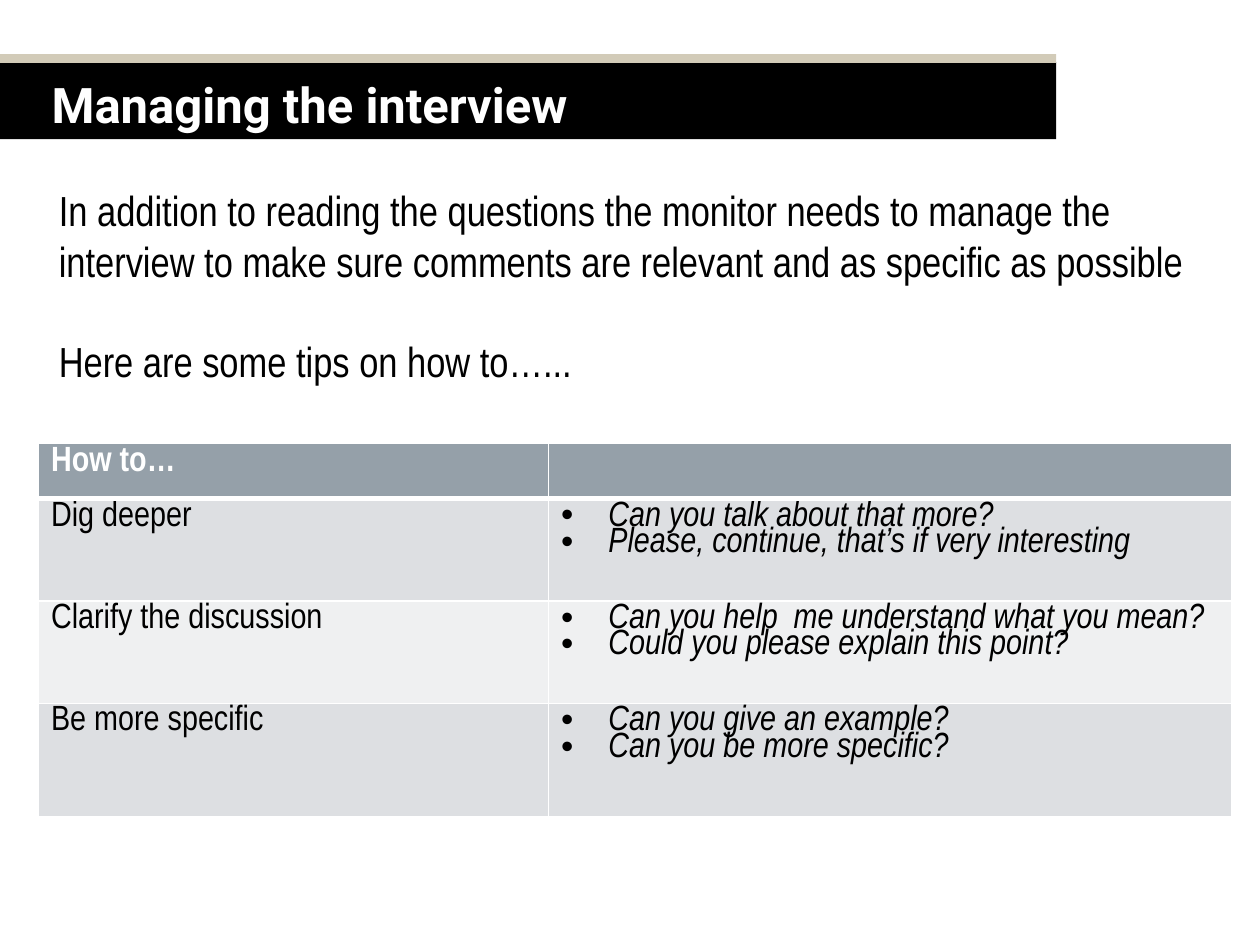
import pptx
import pptx.util
import pptx.dml.color
import pptx.enum.shapes
import pptx.enum.text
import pptx.oxml

Pt = pptx.util.Pt
ANCHOR = pptx.enum.text.MSO_ANCHOR
NS = 'xmlns:a="http://schemas.openxmlformats.org/drawingml/2006/main"'
BODY = "Arial Narrow"
ROWS = [
    ("Dig deeper", ["Can you talk about that more?",
                    "Please, continue, that’s if very interesting"]),
    ("Clarify the discussion", ["Can you help  me understand what you mean?",
                                "Could you please explain this point?"]),
    ("Be more specific", ["Can you give an example?",
                          "Can you be more specific?"]),
]


def color(code):
    return pptx.dml.color.RGBColor.from_string(code)


def paint(item, code):
    item.fill.solid()
    item.fill.fore_color.rgb = color(code)


def style(para, name, size, code, bold=False, slant=False):
    font = para.font
    font.name, font.size = name, Pt(size)
    font.bold, font.italic = bold, slant
    font.color.rgb = color(code)


def add_title(slide, left, top, width, height, text):
    strip = slide.shapes.add_shape(
        pptx.enum.shapes.MSO_SHAPE.RECTANGLE,
        Pt(left), Pt(top), Pt(width), Pt(5))
    strip.shadow.inherit = False
    paint(strip, "D2CBB8")
    strip.line.fill.background()

    title = slide.shapes.title
    title.left, title.top = Pt(left), Pt(top + 4.5)
    title.width, title.height = Pt(width), Pt(height - 4.5)
    paint(title, "000000")
    frame = title.text_frame
    frame.text = text
    frame.auto_size = pptx.enum.text.MSO_AUTO_SIZE.NONE
    frame.vertical_anchor = ANCHOR.BOTTOM
    frame.margin_left, frame.margin_bottom = Pt(29.5), Pt(3)
    para = frame.paragraphs[0]
    para.alignment = pptx.enum.text.PP_ALIGN.LEFT
    style(para, "Roboto", 28, "FFFFFF", bold=True)


def add_intro(slide, left, top, width, height, lines):
    box = slide.shapes.add_textbox(Pt(left), Pt(top), Pt(width), Pt(height))
    frame = box.text_frame
    frame.word_wrap = True
    frame.margin_top = Pt(26)
    for num, line in enumerate(lines):
        para = frame.paragraphs[0] if num == 0 else frame.add_paragraph()
        para.text = line
        if num:
            para.space_before = Pt(28.5)
        style(para, BODY, 24, "000000")


def add_lines(cell, base):
    props = cell._tc.get_or_add_tcPr()
    for side in "LRTB":
        thick = 3 if (side, base) in (("B", 0), ("T", 1)) else 1
        props.append(pptx.oxml.parse_xml(
            f'<a:ln{side} {NS} w="{Pt(thick)}"><a:solidFill>'
            f'<a:srgbClr val="FFFFFF"/></a:solidFill></a:ln{side}>'))


def add_bullet(para):
    props = para._p.get_or_add_pPr()
    props.set("marL", str(Pt(27)))
    props.set("indent", str(Pt(-27)))
    for tag in ('buFont {} typeface="Arial"', 'buChar {} char="•"'):
        props.append(pptx.oxml.parse_xml(f"<a:{tag.format(NS)}/>"))


def fill_cell(cell, row, lines, code, fill, bold=False, tips=False):
    add_lines(cell, row)
    paint(cell, fill)
    cell.vertical_anchor = ANCHOR.TOP
    frame = cell.text_frame
    for num, line in enumerate(lines):
        para = frame.paragraphs[0] if num == 0 else frame.add_paragraph()
        para.text = line
        para.line_spacing = 0.8
        if tips:
            add_bullet(para)
        style(para, BODY, 20, code, bold, tips)


def add_tips(slide, left, top, width, height):
    grid = slide.shapes.add_table(
        len(ROWS) + 1, 2, Pt(left), Pt(top), Pt(width), Pt(height)).table
    first = 291.5
    for col, size in zip(grid.columns, (first, width - first)):
        col.width = Pt(size)
    sizes = (31.5, 58.5, 58.5, height - 148.5)
    for row, size in zip(grid.rows, sizes):
        row.height = Pt(size)
    for col, text in enumerate(("How to…", "")):
        fill_cell(grid.cell(0, col), 0, [text], "FFFFFF", "95A0A9", bold=True)
    for num, (name, tips) in enumerate(ROWS, 1):
        fill = "DDDFE2" if num % 2 else "EFF0F1"
        fill_cell(grid.cell(num, 0), num, [name], "000000", fill)
        fill_cell(grid.cell(num, 1), num, tips, "000000", fill, tips=True)


def main():
    deck = pptx.Presentation()
    deck.slide_width, deck.slide_height = Pt(720), Pt(540)
    slide = deck.slides.add_slide(deck.slide_layouts[5])
    add_title(slide, 0, 31, 603.5, 48.5, "Managing the interview")
    add_intro(slide, 26.5, 79.5, 671, 174, [
        "In addition to reading the questions the monitor needs to manage the "
        "interview to make sure comments are relevant and as specific as possible",
        "Here are some tips on how to…...",
    ])
    add_tips(slide, 22, 253.5, 682, 213)
    deck.save("out.pptx")


if __name__ == "__main__":
    main()
